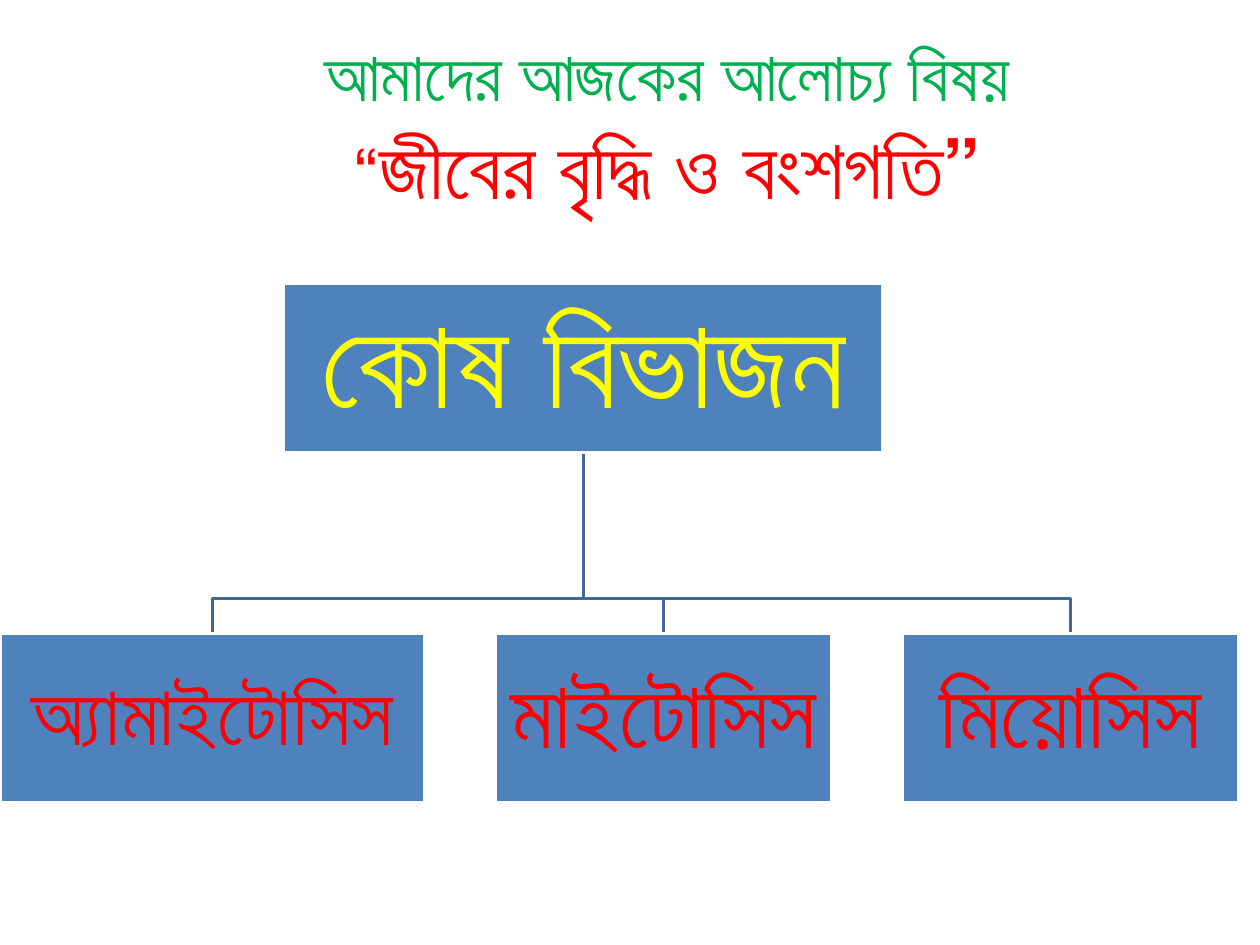
"""Build a slide that shows the three kinds of cell division as a tree."""
from dataclasses import dataclass

from pptx import Presentation
from pptx.dml.color import RGBColor
from pptx.enum.shapes import MSO_SHAPE
from pptx.enum.text import MSO_ANCHOR, MSO_AUTO_SIZE, PP_ALIGN
from pptx.util import Inches, Pt

RECTANGLE = MSO_SHAPE.RECTANGLE
MIDDLE = MSO_ANCHOR.MIDDLE
NO_AUTOFIT = MSO_AUTO_SIZE.NONE
CENTER = PP_ALIGN.CENTER

FONT = "Calibri"
COLORS = {
    "heading": "00B050",
    "topic": "FF0000",
    "root": "FFFF00",
    "box": "4F81BD",
    "outline": "FFFFFF",
    "branch": "3F6797",
}
BOX_HEIGHT = 1.34
ROOT_TOP = 2.25
CHILD_TOP = 5.03
BRANCH_TOP = 4.75


@dataclass
class Node:
    text: str
    left: float
    top: float
    width: float
    size: float
    color: str = "topic"
    bold: bool = True
    inset: float = 0.04

    @property
    def center(self) -> float:
        return self.left + self.width / 2


ROOT = Node("কোষ বিভাজন", 2.25, ROOT_TOP, 4.76, 72, color="root", inset=0.05)
CHILDREN = [
    Node("অ্যামাইটোসিস", 0, CHILD_TOP, 3.37, 48, inset=0.03),
    Node("মাইটোসিস", 3.93, CHILD_TOP, 2.67, 54),
    Node("মিয়োসিস", 7.16, CHILD_TOP, 2.67, 54, bold=False),
]


def color_of(name: str) -> RGBColor:
    return RGBColor.from_string(COLORS[name])


def add_text(paragraph, text: str, *, size: float, color: str, bold: bool | None = None) -> None:
    run = paragraph.add_run()
    run.text = text
    run.font.name = FONT
    run.font.size = Pt(size)
    run.font.bold = bold
    run.font.color.rgb = color_of(color)


def fill_title(title) -> None:
    title.left, title.top = Inches(0.58), Inches(0.5)
    title.width, title.height = Inches(9.42), Inches(0.97)
    frame = title.text_frame
    frame.auto_size = NO_AUTOFIT
    frame.vertical_anchor = MIDDLE
    paragraph = frame.paragraphs[0]
    paragraph.alignment = CENTER
    add_text(paragraph, "আমাদের আজকের আলোচ্য বিষয়", size=39.6, color="heading")
    paragraph.add_line_break()
    add_text(paragraph, "“", size=39.6, color="topic")
    add_text(paragraph, "জীবের বৃদ্ধি ও বংশগতি”", size=47.7, color="topic", bold=True)


def add_branch(slide, parent: Node, child: Node) -> None:
    start = (Inches(parent.center), Inches(parent.top + BOX_HEIGHT))
    corners = [
        (Inches(parent.center), Inches(BRANCH_TOP)),
        (Inches(child.center), Inches(BRANCH_TOP)),
        (Inches(child.center), Inches(child.top)),
    ]
    builder = slide.shapes.build_freeform(*start)
    builder.add_line_segments(corners, close=False)
    shape = builder.convert_to_shape()
    shape.shadow.inherit = False
    shape.fill.background()
    shape.line.color.rgb = color_of("branch")
    shape.line.width = Pt(2)


def add_node(slide, node: Node) -> None:
    shape = slide.shapes.add_shape(
        RECTANGLE, Inches(node.left), Inches(node.top), Inches(node.width), Inches(BOX_HEIGHT)
    )
    shape.shadow.inherit = False
    shape.fill.solid()
    shape.fill.fore_color.rgb = color_of("box")
    shape.line.color.rgb = color_of("outline")
    shape.line.width = Pt(2)
    frame = shape.text_frame
    frame.word_wrap = True
    frame.vertical_anchor = MIDDLE
    frame.margin_left = frame.margin_right = Inches(node.inset)
    frame.margin_top = frame.margin_bottom = Inches(node.inset)
    paragraph = frame.paragraphs[0]
    paragraph.alignment = CENTER
    paragraph.line_spacing = 0.9
    add_text(paragraph, node.text, size=node.size, color=node.color, bold=node.bold)


def main() -> None:
    presentation = Presentation()
    presentation.slide_width, presentation.slide_height = Inches(10), Inches(7.5)
    slide = presentation.slides.add_slide(presentation.slide_layouts.get_by_name("Title Only"))
    fill_title(slide.shapes.title)
    for child in reversed(CHILDREN):
        add_branch(slide, ROOT, child)
    for node in [ROOT, *CHILDREN]:
        add_node(slide, node)
    presentation.save("out.pptx")


if __name__ == "__main__":
    main()
